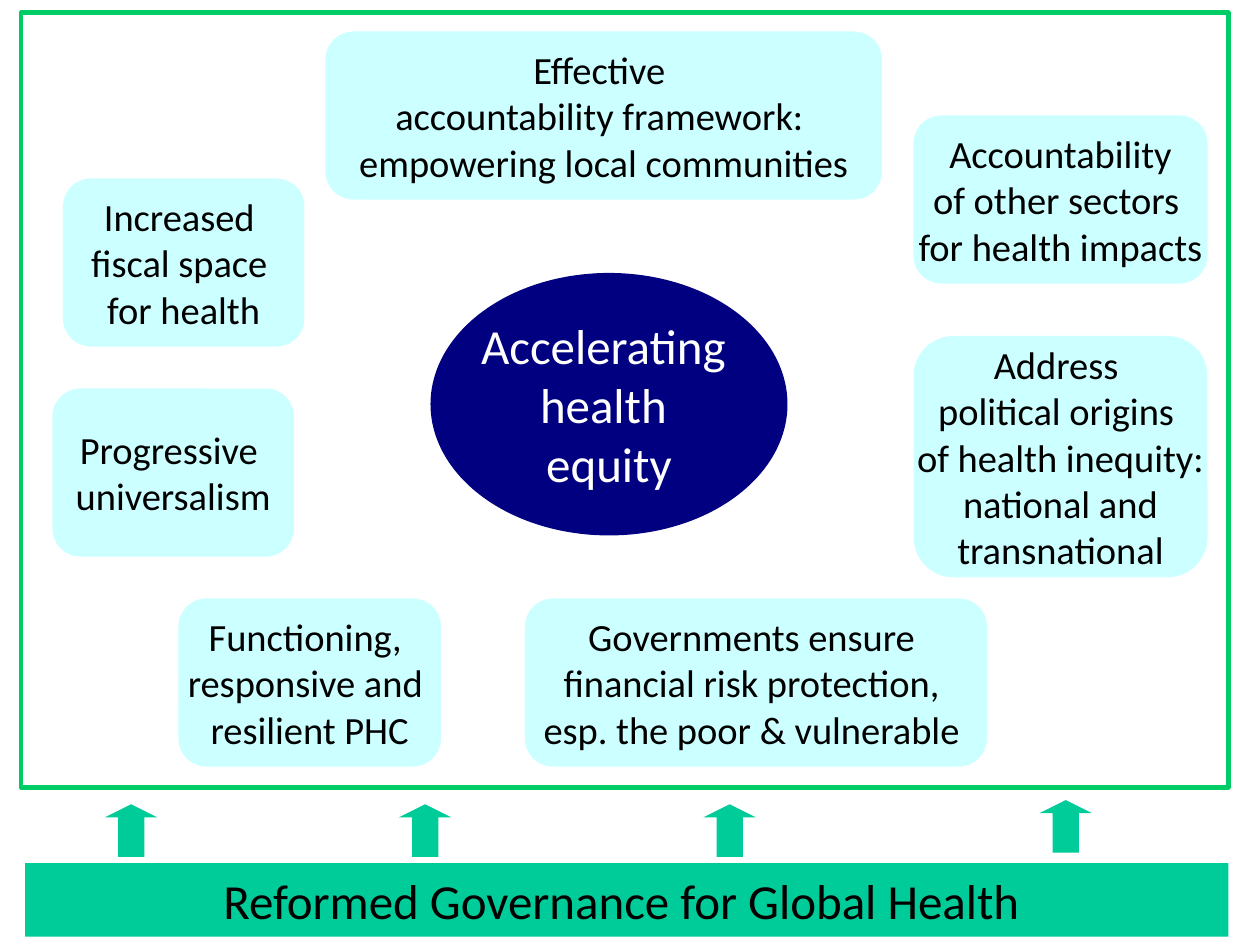
from dataclasses import dataclass

from pptx import Presentation
from pptx import util as u
from pptx.dml.color import RGBColor
from pptx.enum import shapes, text


@dataclass(frozen=True)
class Theme:
    """Colours, font and type sizes of the slide."""
    font: str = "Calibri"
    green: str = "00CC99"
    border: str = "00CC66"
    navy: str = "000080"
    pale: str = "CCFFFF"
    black: str = "000000"
    white: str = "FFFFFF"
    heading: int = 28
    body: int = 22
    border_width: float = 2.5


class Canvas:
    """Draws themed elements on a grid of 120 columns by 90 rows."""

    def __init__(self, deck, page, theme):
        """Keep the page, the theme and the size of one grid cell."""
        self.page, self.theme = page, theme
        self.column = deck.slide_width / 120
        self.row = deck.slide_height / 90

    def shape(self, kind, area, fill=None):
        """Add a flat shape over an area of left, top, columns and rows."""
        left, top, columns, rows = area
        shape = self.page.shapes.add_shape(
            kind, round(left * self.column), round(top * self.row),
            round(columns * self.column), round(rows * self.row))
        shape.shadow.inherit = False
        shape.line.fill.background()
        if fill:
            shape.fill.solid()
            shape.fill.fore_color.rgb = RGBColor.from_string(fill)
        else:
            shape.fill.background()
        return shape

    def label(self, shape, lines, size, color):
        """Centre the lines in a shape, one paragraph each."""
        frame = shape.text_frame
        frame.word_wrap = False
        frame.vertical_anchor = text.MSO_ANCHOR.MIDDLE
        for index, line in enumerate(lines):
            para = frame.add_paragraph() if index else frame.paragraphs[0]
            para.alignment = text.PP_ALIGN.CENTER
            span = para.add_run()
            span.text = line
            span.font.name = self.theme.font
            span.font.size = u.Pt(size)
            span.font.color.rgb = RGBColor.from_string(color)

    def banner(self, area, line):
        """Add the foundation bar."""
        bar = self.shape(shapes.MSO_SHAPE.RECTANGLE, area, self.theme.green)
        self.label(bar, [line], self.theme.heading, self.theme.black)

    def goal(self, area, lines):
        """Add the central oval."""
        oval = self.shape(shapes.MSO_SHAPE.OVAL, area, self.theme.navy)
        self.label(oval, lines, self.theme.heading, self.theme.white)

    def factor(self, area, lines):
        """Add a rounded box that surrounds the goal."""
        box = self.shape(shapes.MSO_SHAPE.ROUNDED_RECTANGLE, area, self.theme.pale)
        self.label(box, lines, self.theme.body, self.theme.black)

    def frame(self, area):
        """Add the outlined frame."""
        border = self.shape(shapes.MSO_SHAPE.RECTANGLE, area)
        border.line.color.rgb = RGBColor.from_string(self.theme.border)
        border.line.width = u.Pt(self.theme.border_width)

    def arrow(self, left, top):
        """Add an upward arrow between the bar and the frame."""
        arrow = self.shape(shapes.MSO_SHAPE.UP_ARROW, (left, top, 5, 5), self.theme.green)
        arrow.adjustments[0] = 0.5
        arrow.adjustments[1] = 0.25


FACTORS = [
    ((87, 11, 28, 16),
     ["Accountability", "of other sectors ", "for health impacts"]),
    ((31, 3, 53, 16),
     ["Effective ", "accountability framework: ", "empowering local communities"]),
    ((6, 17, 23, 16),
     ["Increased ", "fiscal space ", "for health"]),
    ((87, 32, 28, 23),
     ["Address ", "political origins ", "of health inequity:", " national and ",
      "transnational"]),
    ((5, 37, 23, 16),
     ["Progressive ", "universalism"]),
    ((17, 57, 25, 16),
     ["Functioning, ", "responsive and ", "resilient PHC"]),
    ((50, 57, 44, 16),
     ["Governments ensure ", "financial risk protection, ", "esp. the poor & vulnerable "]),
]
ARROWS = [(10, 76.6), (38, 76.6), (67, 76.6), (99, 76.2)]


def main():
    """Build and save the slide."""
    deck = Presentation()
    deck.slide_width, deck.slide_height = u.Inches(10), u.Inches(7.5)
    page = deck.slides.add_slide(deck.slide_layouts.get_by_name("Blank"))
    canvas = Canvas(deck, page, Theme())
    canvas.banner((2.4, 82.2, 114.6, 7), "Reformed Governance for Global Health ")
    canvas.goal((41, 26, 34, 25), ["Accelerating ", "health ", "equity"])
    for area, lines in FACTORS:
        canvas.factor(area, lines)
    canvas.frame((2, 1.2, 115, 73.8))
    for left, top in ARROWS:
        canvas.arrow(left, top)
    deck.save("out.pptx")


if __name__ == "__main__":
    main()
